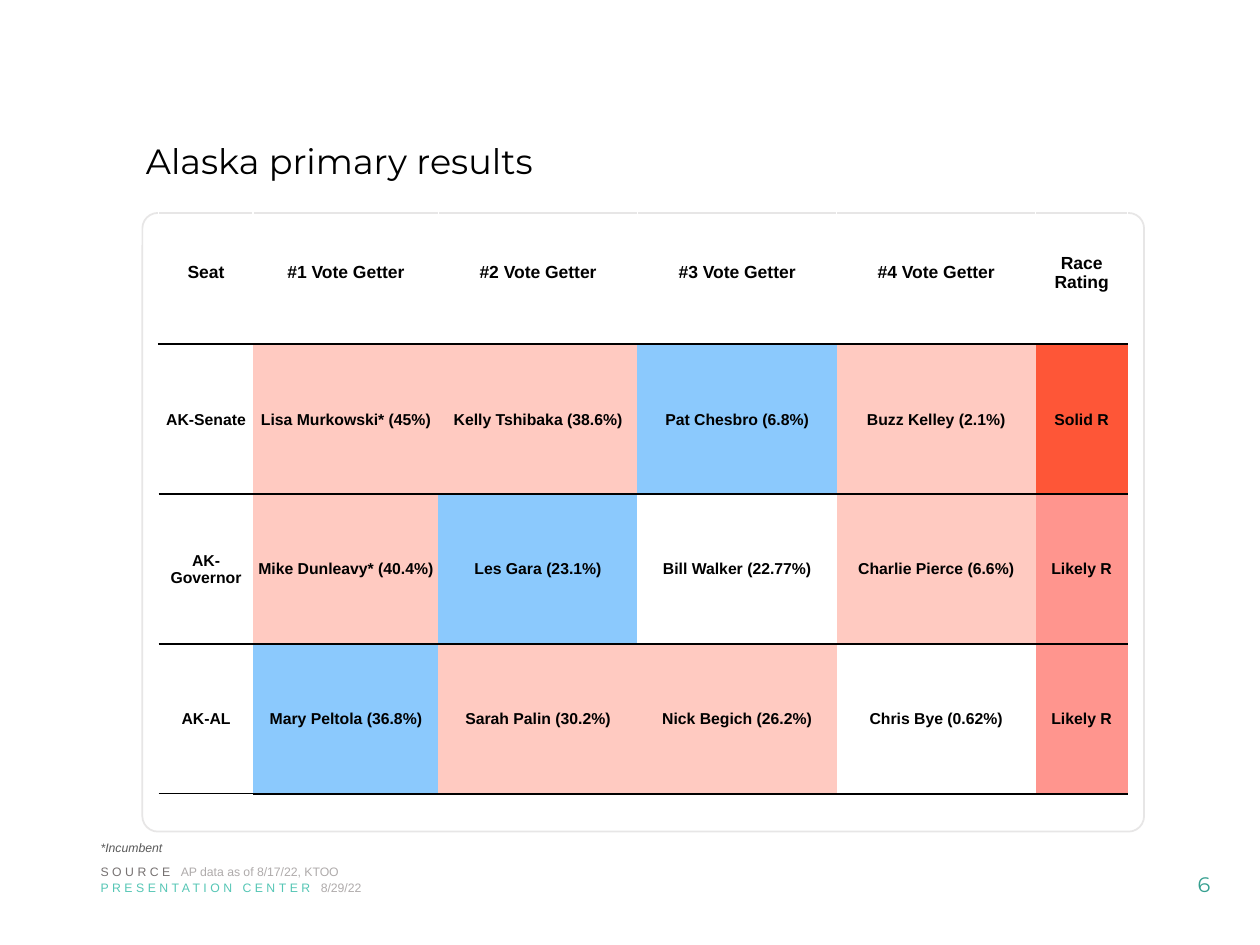
"""Build the Alaska primary results slide."""
from lxml.etree import SubElement
from pptx import Presentation
from pptx.dml.color import RGBColor
from pptx.enum.shapes import MSO_SHAPE
from pptx.enum.text import MSO_ANCHOR, PP_ALIGN
from pptx.oxml.ns import qn
from pptx.util import Inches, Pt

C = {
    "black": "000000", "white": "FFFFFF", "teal": "55C6B5", "page": "359F8F",
    "frame": "E7E6E6", "label": "767171", "muted": "AFABAB", "note": "595959",
    "rep": "FFCAC1", "dem": "8BC9FD", "solid": "FE5637", "likely": "FF958E",
}


def write(p, text, size=7, color="black", font="Arial", bold=False, italic=False, spacing=0):
    r = p.add_run()
    r.text = text
    r.font.size = Pt(size)
    r.font.name = font
    r.font.bold = bold
    r.font.italic = italic
    r.font.color.rgb = RGBColor.from_string(C[color])
    if spacing:
        r.font._element.set("spc", str(spacing * 100))


def border(cell, side, color=None, width=1):
    ln = SubElement(cell._tc.get_or_add_tcPr(), qn(f"a:ln{side}"), w=str(Pt(width)))
    if color:
        fill = SubElement(ln, qn("a:solidFill"))
        SubElement(fill, qn("a:srgbClr"), val=C[color])
    else:
        SubElement(ln, qn("a:noFill"))


prs = Presentation()
prs.slide_width, prs.slide_height = Inches(10), Inches(7.5)
s = prs.slides.add_slide(prs.slide_layouts[6])

frame = s.shapes.add_shape(MSO_SHAPE.ROUNDED_RECTANGLE, Inches(1.13), Inches(1.69), Inches(7.95), Inches(4.91))
frame.adjustments[0] = 0.025
frame.shadow.inherit = False
frame.fill.solid()
frame.fill.fore_color.rgb = RGBColor.from_string(C["white"])
frame.line.color.rgb = RGBColor.from_string(C["frame"])
frame.line.width = Pt(1)

texts = [
    ((9.11, 6.82, 0.89, 0.4), MSO_ANCHOR.MIDDLE, PP_ALIGN.CENTER, 1,
     [("6", dict(size=12, color="page", font="Montserrat"))]),
    ((1.06, 0.9, 8.03, 0.79), MSO_ANCHOR.MIDDLE, PP_ALIGN.LEFT, 0.9,
     [("Alaska primary results", dict(size=20, font="Montserrat"))]),
    ((0.7, 6.62, 9.02, 0.22), MSO_ANCHOR.TOP, PP_ALIGN.LEFT, 1,
     [("*Incumbent", dict(color="note", italic=True))]),
    ((0.7, 6.81, 3.99, 0.22), MSO_ANCHOR.TOP, PP_ALIGN.LEFT, 1,
     [("SOURCE ", dict(color="label", spacing=2)),
      ("AP data as of 8/17/22, KTOO", dict(color="muted"))]),
    ((0.7, 6.94, 2.94, 0.22), MSO_ANCHOR.TOP, PP_ALIGN.LEFT, 1,
     [("PRESENTATION CENTER ", dict(color="teal", spacing=2)),
      ("8/29/22", dict(color="muted"))]),
]
for box, anchor, align, line_spacing, runs in texts:
    tf = s.shapes.add_textbox(*map(Inches, box)).text_frame
    tf.word_wrap = True
    tf.vertical_anchor = anchor
    p = tf.paragraphs[0]
    p.alignment = align
    p.line_spacing = line_spacing
    for text, style in runs:
        write(p, text, **style)

rows = [
    [("Seat", None), ("#1 Vote Getter", None), ("#2 Vote Getter", None),
     ("#3 Vote Getter", None), ("#4 Vote Getter", None), ("Race Rating", None)],
    [("AK-Senate", None), ("Lisa Murkowski* (45%)", "rep"), ("Kelly Tshibaka (38.6%)", "rep"),
     ("Pat Chesbro (6.8%)", "dem"), ("Buzz Kelley (2.1%)", "rep"), ("Solid R", "solid")],
    [("AK-Governor", None), ("Mike Dunleavy* (40.4%)", "rep"), ("Les Gara (23.1%)", "dem"),
     ("Bill Walker (22.77%)", "white"), ("Charlie Pierce (6.6%)", "rep"), ("Likely R", "likely")],
    [("AK-AL", None), ("Mary Peltola (36.8%)", "dem"), ("Sarah Palin (30.2%)", "rep"),
     ("Nick Begich (26.2%)", "rep"), ("Chris Bye (0.62%)", "white"), ("Likely R", "likely")],
]
table = s.shapes.add_table(4, 6, Inches(1.26), Inches(1.59), Inches(7.69), Inches(4.71)).table
table.first_row = table.horz_banding = False
for column, width in zip(table.columns, [0.75, 1.47, 1.58, 1.58, 1.58, 0.73]):
    column.width = Inches(width)
for row, height in zip(table.rows, [1.14, 1.19, 1.19, 1.19]):
    row.height = Inches(height)

for i, row in enumerate(rows):
    for j, (text, fill) in enumerate(row):
        cell = table.cell(i, j)
        header = i == 0
        cell.margin_left = cell.margin_right = cell.margin_top = Inches(0.01)
        cell.margin_bottom = 0
        cell.vertical_anchor = MSO_ANCHOR.MIDDLE
        p = cell.text_frame.paragraphs[0]
        p.alignment = PP_ALIGN.CENTER
        write(p, text, size=10 if header else 9, bold=True)
        for side in "LR":
            border(cell, side, "white" if header else None)
        border(cell, "T", "white" if header else "black", 1 if header or (j == 0 and i > 1) else 1.5)
        border(cell, "B", "black", 1 if j == 0 and not header else 1.5)
        if fill:
            cell.fill.solid()
            cell.fill.fore_color.rgb = RGBColor.from_string(C[fill])
        else:
            cell.fill.background()

prs.save("out.pptx")
